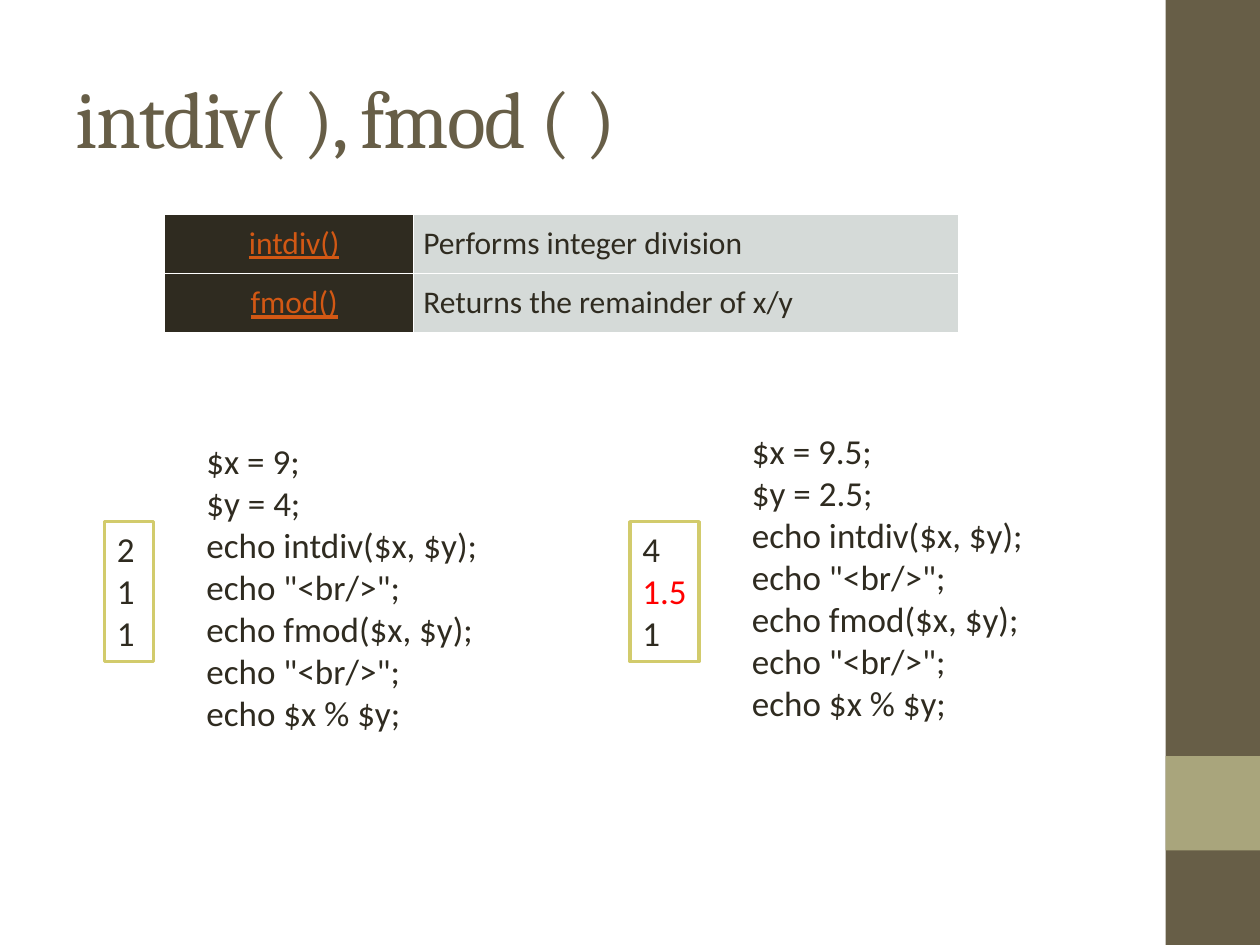
from lxml import etree
from pptx import Presentation
from pptx.dml.color import RGBColor
from pptx.enum.shapes import MSO_SHAPE
from pptx.enum.text import MSO_ANCHOR, MSO_AUTO_SIZE, PP_ALIGN
from pptx.oxml.ns import qn
from pptx.util import Inches, Pt

RECT = MSO_SHAPE.RECTANGLE
MID, TOP = MSO_ANCHOR.MIDDLE, MSO_ANCHOR.TOP
LEFT, CENTER = PP_ALIGN.LEFT, PP_ALIGN.CENTER
NOFIT = MSO_AUTO_SIZE.NONE

THEME = {
    "brown": "675E47", "sage": "A9A57C", "ink": "2F2B20", "pale": "D5DAD8",
    "link": "D25814", "edge": "D2CB6C", "white": "FFFFFF", "red": "FF0000",
    "head": "Cambria", "body": "Calibri",
    "title": 46, "code": 20, "cell": 18,
}

deck = Presentation()
deck.slide_width, deck.slide_height = Inches(10), Inches(7.5)
COL, ROW = deck.slide_width / 100, deck.slide_height / 75
slide = deck.slides.add_slide(deck.slide_layouts[5])
shapes = slide.shapes


def grid(x, y, w, h):
    return int(x * COL), int(y * ROW), int(w * COL), int(h * ROW)


def write(para, text, size, tone="ink", face="body"):
    run = para.add_run()
    run.text = text
    run.font.name = THEME[face]
    run.font.size = Pt(THEME[size])
    run.font.color.rgb = RGBColor.from_string(THEME[tone])
    return run


# Side band
for y, h, tone in [(0, 75, "brown"), (60, 7.5, "sage")]:
    band = shapes.add_shape(RECT, *grid(92.5, y, 7.5, h))
    band.shadow.inherit = False
    band.fill.solid()
    band.fill.fore_color.rgb = RGBColor.from_string(THEME[tone])
    band.line.fill.background()

# Title
title = shapes.title
title.left, title.top, title.width, title.height = grid(5, 3, 83.3, 12.5)
frame = title.text_frame
frame.auto_size, frame.vertical_anchor = NOFIT, MID
frame.paragraphs[0].alignment = LEFT
run = write(frame.paragraphs[0], "intdiv( ), fmod ( )", "title", "brown", "head")
run.font._element.set("spc", "-100")

# Function table
funcs = [("intdiv()", "Performs integer division"),
         ("fmod()", "Returns the remainder of x/y")]
table = shapes.add_table(2, 2, *grid(13, 17, 63.1, 9.4)).table
for col, wide in zip(table.columns, (19.8, 43.3)):
    col.width = int(wide * COL)
for i, names in enumerate(funcs):
    for j, text in enumerate(names):
        cell = table.cell(i, j)
        cell.vertical_anchor = TOP if j else MID
        cell.margin_left = Inches(0.08 if j else 0.17)
        cell.margin_right = cell.margin_top = cell.margin_bottom = Inches(0.08)
        para = cell.text_frame.paragraphs[0]
        para.alignment = LEFT if j else CENTER
        run = write(para, text, "cell", "ink" if j else "link")
        run.font.underline = j == 0
        # Borders come before the fill in the cell properties
        props = cell._tc.get_or_add_tcPr()
        for side in ("a:lnL", "a:lnR", "a:lnT", "a:lnB"):
            line = etree.SubElement(props, qn(side), w=str(Pt(1)))
            paint = etree.SubElement(line, qn("a:solidFill"))
            etree.SubElement(paint, qn("a:srgbClr"), val=THEME["white"])
        cell.fill.solid()
        cell.fill.fore_color.rgb = RGBColor.from_string(THEME["pale" if j else "ink"])

# Code samples, each with its output box
calls = ["echo intdiv($x, $y);", 'echo "<br/>";', "echo fmod($x, $y);",
         'echo "<br/>";', "echo $x % $y;"]
demos = [
    (15.4, 34.4, ["$x = 9;", "$y = 4;"], 8.3, 3.9, ["2", "1", "1"]),
    (58.7, 33.6, ["$x = 9.5;", "$y = 2.5;"], 50, 5.5, ["4", "1.5", "1"]),
]
for x, y, setup, left, wide, result in demos:
    code = shapes.add_textbox(*grid(x, y, 23.7, 24.6)).text_frame
    code.word_wrap = False
    for n, text in enumerate(setup + calls):
        para = code.add_paragraph() if n else code.paragraphs[0]
        write(para, text, "code")

    box = shapes.add_shape(RECT, *grid(left, 41.4, wide, 11.1))
    box.shadow.inherit = False
    box.fill.solid()
    box.fill.fore_color.rgb = RGBColor.from_string(THEME["white"])
    box.line.color.rgb = RGBColor.from_string(THEME["edge"])
    box.line.width = Pt(2)
    frame = box.text_frame
    frame.word_wrap, frame.vertical_anchor = False, TOP
    para = frame.paragraphs[0]
    para.alignment = LEFT
    for n, text in enumerate(result):
        if n:
            para.add_line_break()
        write(para, text, "code", "red" if "." in text else "ink")

deck.save("out.pptx")
